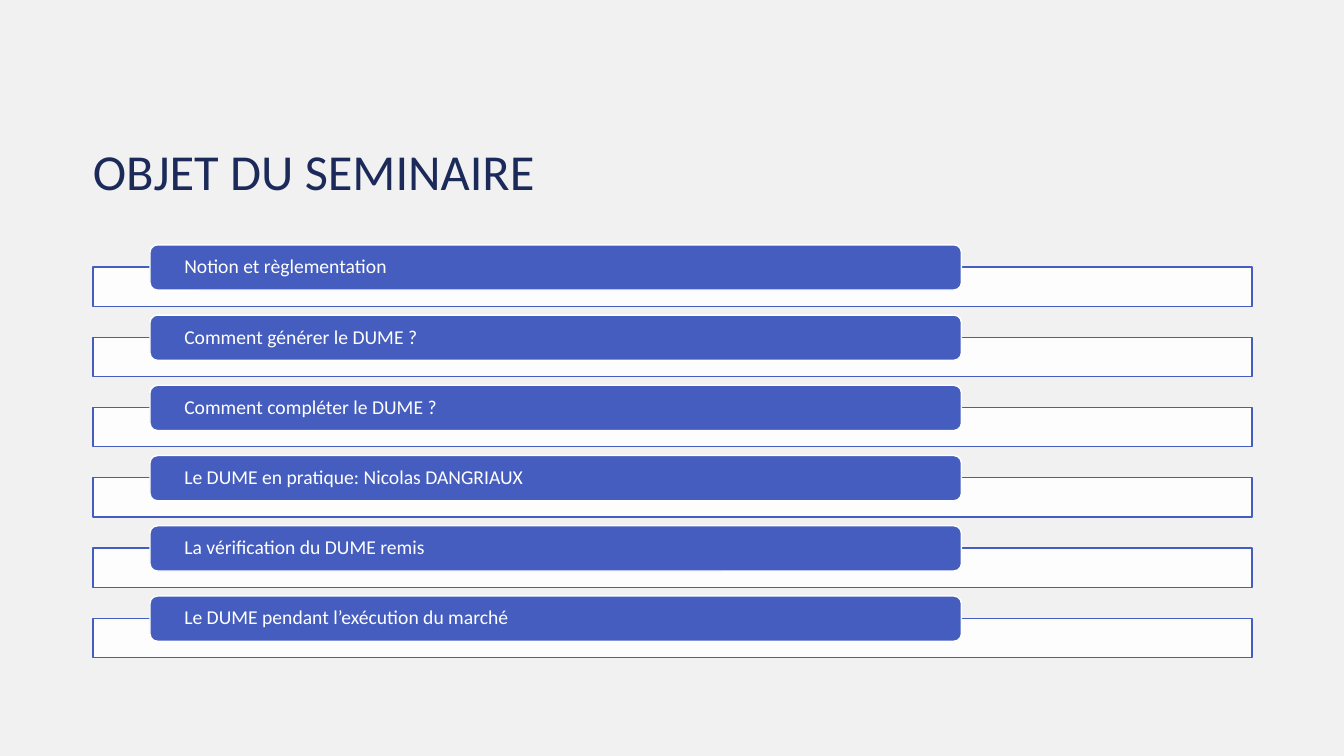
from dataclasses import dataclass

from lxml.etree import SubElement
from pptx import Presentation
from pptx.dml.color import RGBColor
from pptx.enum.shapes import MSO_SHAPE
from pptx.enum.text import MSO_ANCHOR, PP_ALIGN
from pptx.oxml.ns import qn
from pptx.slide import Slide
from pptx.text.text import TextFrame
from pptx.util import Cm, Pt

COLORS = {"background": "F1F1F1", "navy": "1C2A5A", "blue": "455DBE", "white": "FFFFFF"}
FONT = "Calibri"
LEFT, WIDTH = 2.34, 29.21
FIRST_TOP, PITCH = 6.17, 1.77
BAR_OFFSET = 0.56


@dataclass
class Box:
    shape: MSO_SHAPE
    left: float
    top: float
    width: float
    height: float
    fill: str
    line: str
    opacity: int = 100


def rgb(name: str) -> RGBColor:
    return RGBColor.from_string(COLORS[name])


def set_text(tf: TextFrame, text: str, size: int, color: str, anchor: MSO_ANCHOR,
             margins: tuple[float, float, float, float]) -> None:
    tf.text = text
    tf.word_wrap = True
    tf.vertical_anchor = anchor
    tf.margin_left, tf.margin_top, tf.margin_right, tf.margin_bottom = map(Cm, margins)
    p = tf.paragraphs[0]
    p.alignment = PP_ALIGN.LEFT
    p.line_spacing = 0.9
    p.font.name = FONT
    p.font.size = Pt(size)
    p.font.color.rgb = rgb(color)


def add_box(s: Slide, box: Box) -> TextFrame:
    sp = s.shapes.add_shape(box.shape, Cm(box.left), Cm(box.top), Cm(box.width), Cm(box.height))
    sp.shadow.inherit = False
    sp.fill.solid()
    sp.fill.fore_color.rgb = rgb(box.fill)
    if box.opacity < 100:
        clr = sp.fill._xPr.find(qn("a:solidFill"))[0]
        SubElement(clr, qn("a:alpha"), val=str(box.opacity * 1000))
    sp.line.color.rgb = rgb(box.line)
    sp.line.width = Pt(1)
    return sp.text_frame


def add_topic(s: Slide, top: float, text: str) -> None:
    add_box(s, Box(MSO_SHAPE.RECTANGLE, LEFT, top + BAR_OFFSET, WIDTH, 0.99, "white", "blue", 90))
    tf = add_box(s, Box(MSO_SHAPE.ROUNDED_RECTANGLE, 3.78, top, 20.45, 1.14, "blue", "white"))
    set_text(tf, text, 14, "white", MSO_ANCHOR.MIDDLE, (0.81, 0, 0.81, 0))
    tf.paragraphs[0].space_after = Pt(5)


def main() -> None:
    prs = Presentation()
    prs.slide_width, prs.slide_height = Cm(33.87), Cm(19.05)
    s = prs.slides.add_slide(prs.slide_layouts.get_by_name("Title Only"))
    s.background.fill.solid()
    s.background.fill.fore_color.rgb = rgb("background")

    title = s.shapes.title
    title.left, title.top, title.width, title.height = Cm(LEFT), Cm(2.34), Cm(WIDTH), Cm(3.25)
    set_text(title.text_frame, "OBJET DU SEMINAIRE", 36, "navy", MSO_ANCHOR.BOTTOM,
             (0, 0.13, 0.25, 0.51))

    topics = [
        "Notion et règlementation",
        "Comment générer le DUME ?",
        "Comment compléter le DUME ?",
        "Le DUME en pratique: Nicolas DANGRIAUX",
        "La vérification du DUME remis",
        "Le DUME pendant l’exécution du marché",
    ]
    for i, topic in enumerate(topics):
        add_topic(s, FIRST_TOP + i * PITCH, topic)
    prs.save("out.pptx")


if __name__ == "__main__":
    main()
